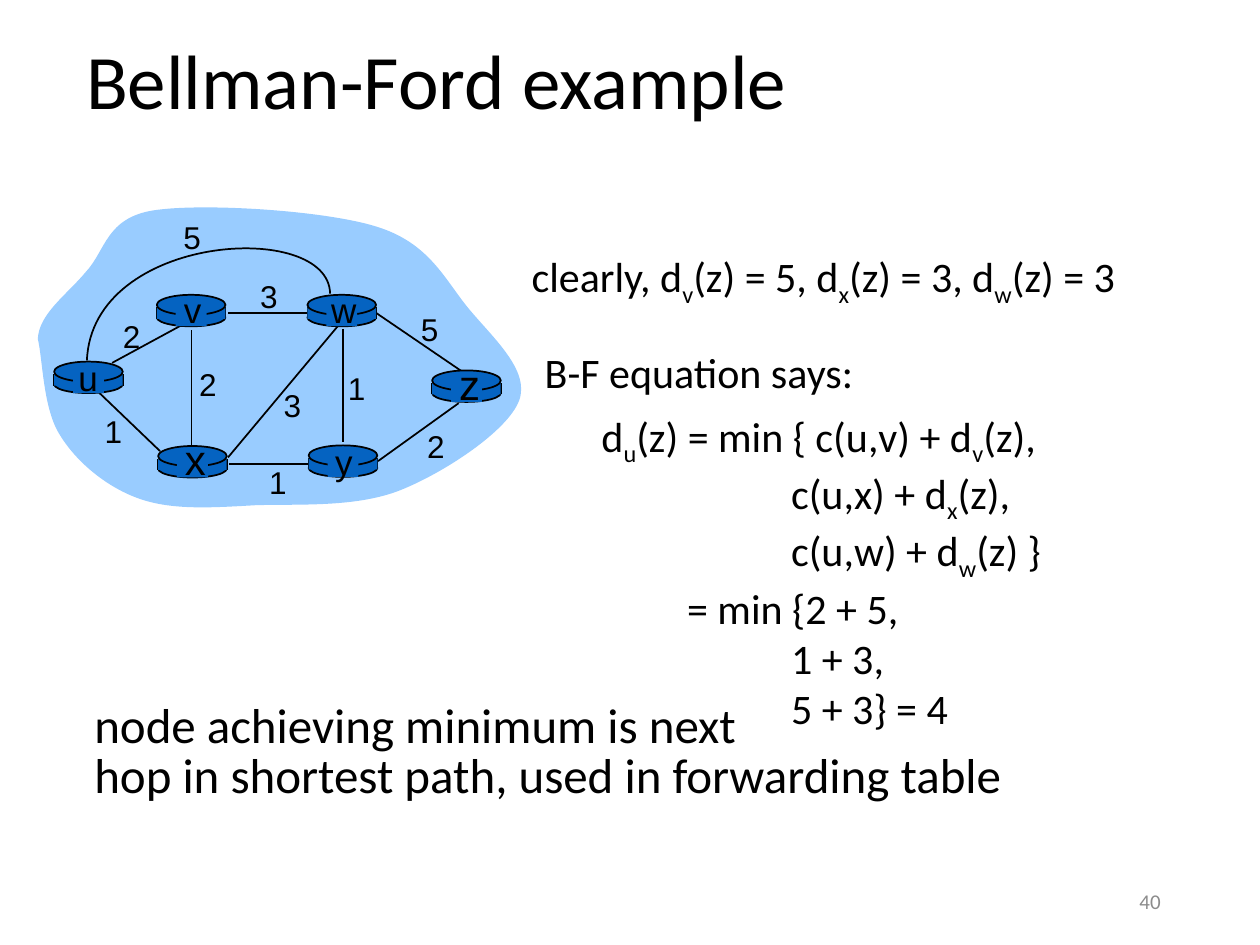
from pptx import Presentation, util as u
from pptx.dml.color import RGBColor
from pptx.enum import shapes as sh, text as tx
from pptx.oxml.ns import qn
from lxml import etree


class Theme:
    ink = RGBColor.from_string("000000")
    cloud = RGBColor.from_string("99CCFF")
    node = RGBColor.from_string("0563C1")
    grey = RGBColor.from_string("8C8C8C")
    sans, body = "Arial", "Calibri"
    title, close, text, name, cost, page = 44, 28, 24, 20, 18, 12
    line = u.Pt(1)


deck = Presentation()
deck.slide_width, deck.slide_height = u.Inches(10), u.Inches(7.5)
page = deck.slides.add_slide(deck.slide_layouts[6])
items = page.shapes
cell = deck.slide_width // 100  # the grid has 100 columns and 75 rows


def write(box, lines, size, face=Theme.body, ink=Theme.ink, side=tx.PP_ALIGN.LEFT,
          wrap=True, mid=False, gap=None):
    """Add a text box from (indent, text) lines; "_" lowers the next letter."""
    frame = items.add_textbox(*(int(n * cell) for n in box)).text_frame
    frame.word_wrap = wrap
    if mid:
        frame.vertical_anchor = tx.MSO_ANCHOR.MIDDLE
    for i, (dent, line) in enumerate(lines):
        para = frame.paragraphs[0] if i == 0 else frame.add_paragraph()
        para.alignment = side
        para.line_spacing = gap
        if dent:
            para._p.get_or_add_pPr().set("marL", str(int(dent * cell)))
        font = para.font
        font.name, font.size, font.color.rgb = face, u.Pt(size), ink
        first, *rest = line.split("_")
        para.add_run().text = first
        for part in rest:
            low = para.add_run()
            low.text = part[0]
            low._r.get_or_add_rPr().set("baseline", "-25000")
            para.add_run().text = part[1:]


def curve(dots, closed):
    """Add an outline of Bezier segments: a start, then three points for each."""
    start, *rest = [(int(x * cell), int(y * cell)) for x, y in dots]
    pen = items.build_freeform(*start)
    pen.add_line_segments(rest, close=closed)
    form = pen.convert_to_shape()
    form.shadow.inherit = False
    legs = list(form._element.iter(qn("a:lnTo")))
    for one, two, three in zip(legs[::3], legs[1::3], legs[2::3]):
        one.tag = qn("a:cubicBezTo")
        for leg in (two, three):
            one.append(leg[0])
            leg.getparent().remove(leg)
    return form


write((5.85, 1.9, 85, 9.6), [(0, "Bellman-Ford example")], Theme.title, mid=True, gap=0.9)

cloud = curve([(3, 26.9), (3.1, 24.9), (5.3, 23.4), (6.8, 21.6), (8.4, 19.9), (8.4, 17.3),
               (12.2, 16.7), (16.1, 16.1), (25.8, 16.7), (29.9, 18), (34.1, 19.3),
               (35.3, 22.2), (37.2, 24.5), (39.1, 26.8), (42.1, 29.4), (41.2, 31.8),
               (40.3, 34.2), (35.3, 37.5), (31.8, 38.9), (28.3, 40.3), (23.7, 40),
               (20.3, 40.1), (16.8, 40.3), (13.7, 40.5), (11.1, 39.6), (8.5, 38.7),
               (6.1, 36.7), (4.8, 34.6), (3.4, 32.5), (3.4, 28.5), (3, 26.9)], True)
cloud.fill.solid()
cloud.fill.fore_color.rgb = Theme.cloud
cloud.line.fill.background()

# Each router: top left corner, centre of its name, size of its name
nodes = {"u": (4.3, 28.7, 7, 29.95, Theme.name), "y": (24.5, 35.35, 27.3, 36.6, Theme.name),
         "x": (12.55, 35.4, 15.5, 36.4, Theme.text), "w": (24.4, 23.4, 27.1, 24.6, Theme.name),
         "v": (12.45, 23.4, 15.3, 24.6, Theme.name), "z": (34.3, 29.4, 37.25, 30.5, Theme.text)}
wide = 5.45
links = [(8.9, 28.8, 14.8, 25.6), (27.2, 26.1, 27.2, 35.1), (15.2, 26.2, 15.2, 35.5),
         (18.1, 36.3, 26.8, 25.9), (30, 36.6, 36.4, 32), (24.5, 36.85, 18.2, 36.85),
         (12.7, 35.8, 7.9, 31.2), (24.4, 24.85, 18.1, 24.85), (36.7, 29.5, 29.8, 24.8)]
walls = [(x + dx, y + 1, x + dx, y + 1.9)
         for x, y, *_ in nodes.values() for dx in (0, wide)]
for ends in links + walls:
    link = items.add_connector(sh.MSO_CONNECTOR.STRAIGHT, *(int(n * cell) for n in ends))
    link.line.color.rgb, link.line.width = Theme.ink, Theme.line
    etree.SubElement(link._element.spPr, qn("a:effectLst"))

arc = curve([(26.2, 23.3), (26.1, 17.4), (7.3, 18.5), (6.9, 28.6)], False)
arc.fill.background()
arc.line.color.rgb, arc.line.width = Theme.ink, Theme.line

# Base, wall, lid and name plate
oval, rect = sh.MSO_SHAPE.OVAL, sh.MSO_SHAPE.RECTANGLE
parts = [(oval, 0, 1.1, wide, 1.4), (rect, 0, 1, wide, 0.9),
         (oval, 0, 0, wide, 1.6), (rect, 1.5, 0.2, 2.45, 2.3)]
for x, y, *_ in nodes.values():
    for kind, dx, dy, w, h in parts:
        part = items.add_shape(kind, *(int(n * cell) for n in (x + dx, y + dy, w, h)))
        part.shadow.inherit = False
        part.fill.solid()
        part.fill.fore_color.rgb = Theme.node
        if kind == oval:
            part.line.color.rgb, part.line.width = Theme.ink, Theme.line
        else:
            part.line.fill.background()

# Names and link costs, centred on a point
costs = [("2", 10.45, 26.7), ("2", 16.5, 30.5), ("1", 9, 34.2), ("3", 23.2, 32.15),
         ("1", 22.05, 38.25), ("1", 28.3, 30.8), ("2", 34.6, 35.4), ("5", 34.1, 26.1),
         ("3", 21.35, 23.5), ("5", 15.25, 18.8)]
marks = [(name, *spot) for name, (_, _, *spot) in nodes.items()]
marks += [(*cost, Theme.cost) for cost in costs]
for mark, x, y, size in marks:
    high = size / 6 + 1
    write((x - 1.8, y - high / 2, 3.6, high), [(0, mark)], size, Theme.sans,
          side=tx.PP_ALIGN.CENTER, wrap=False)

write((41.2, 19.4, 49.2, 5), [(0, "clearly, d_v(z) = 5, d_x(z) = 3, d_w(z) = 3")], Theme.text)
write((46.75, 32.05, 37.3, 25.2),
      [(0, "d_u(z) = min { c(u,v) + d_v(z),"), (15.05, "c(u,x) + d_x(z),"),
       (15.05, "c(u,w) + d_w(z) }"), (6.8, "= min {2 + 5,"),
       (15.05, "1 + 3,"), (15.05, "5 + 3} = 4")], Theme.text)
write((6.5, 55.35, 74.8, 9.1),
      [(0, "node achieving minimum is next"),
       (0, "hop in shortest path, used in forwarding table")], Theme.close, gap=0.85)
write((42.25, 27, 26.7, 5), [(0, "B-F equation says:")], Theme.text)
write((70.6, 69.5, 22.5, 4), [(0, "40")], Theme.page, ink=Theme.grey,
      side=tx.PP_ALIGN.RIGHT, mid=True)

deck.save("out.pptx")
